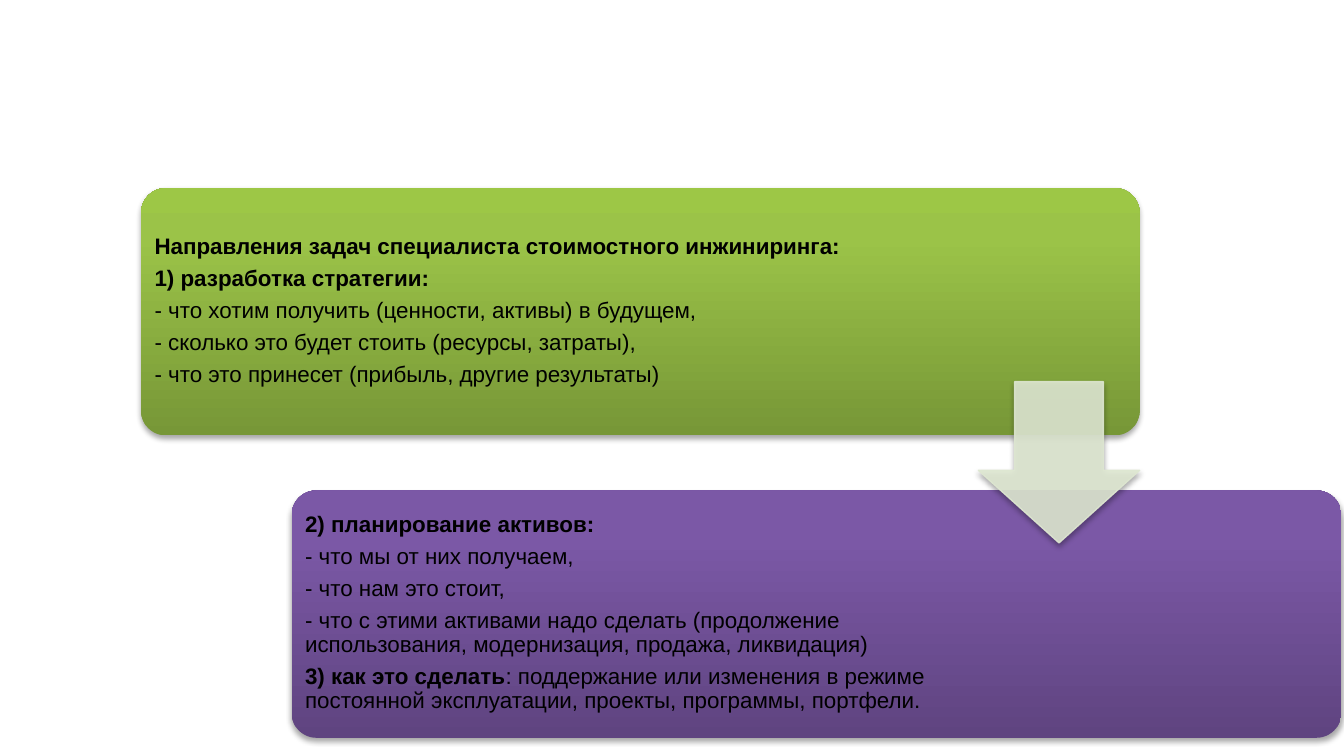
from lxml import etree
from pptx import Presentation
from pptx import util as u
from pptx.dml import color
from pptx.enum import shapes, text
from pptx.oxml import ns


def rgb(value):
    return color.RGBColor.from_string(value)


def add_child(parent, tag, **attributes):
    child = etree.SubElement(parent, ns.qn(tag))
    for name, value in attributes.items():
        child.set(name, str(value))
    return child


def add_span(para, content, bold=False, size=12, font="Arial", fill="000000"):
    span = para.add_run()
    span.text = content
    span.font.bold = bold
    span.font.size = u.Pt(size)
    span.font.name = font
    span.font.color.rgb = rgb(fill)


class StepSlide:
    """Draws the cards and arrow of a descending step process on one slide."""

    corner = 0.1
    inset = u.Inches(0.05)
    arrow_fill = "DEE7D1"
    arrow_alpha = 90000

    def __init__(self, deck):
        self.page = deck.slides.add_slide(deck.slide_layouts[6])

    def shape(self, kind, area, adjustments):
        shape = self.page.shapes.add_shape(kind, *map(u.Inches, area))
        for index, value in enumerate(adjustments):
            shape.adjustments[index] = value
        return shape

    def shadow(self, shape):
        shape.shadow.inherit = False
        effects = shape._element.spPr.find(ns.qn("a:effectLst"))
        outer = add_child(effects, "a:outerShdw", blurRad=u.Pt(3.1), dist=u.Pt(1.8),
                          dir=5400000, rotWithShape=0)
        add_child(add_child(outer, "a:srgbClr", val="000000"), "a:alpha", val=35000)

    def card(self, area, stops):
        card = self.shape(shapes.MSO_SHAPE.ROUNDED_RECTANGLE, area, [self.corner])
        card.fill.gradient()
        card.fill.gradient_angle = 90
        stop_list = next(card._element.spPr.iter(ns.qn("a:gsLst")))
        for stop in list(stop_list):
            stop_list.remove(stop)
        for position, value in stops:
            stop = add_child(stop_list, "a:gs", pos=position * 1000)
            add_child(stop, "a:srgbClr", val=value)
        card.line.fill.background()
        self.shadow(card)

    def paragraphs(self, area, paragraphs):
        box = self.page.shapes.add_textbox(*map(u.Inches, area))
        frame = box.text_frame
        frame.word_wrap = True
        frame.vertical_anchor = text.MSO_ANCHOR.MIDDLE
        frame.margin_left = frame.margin_right = self.inset
        frame.margin_top = frame.margin_bottom = self.inset
        for index, spans in enumerate(paragraphs):
            para = frame.add_paragraph() if index else frame.paragraphs[0]
            para.line_spacing = 0.9
            para.space_after = u.Pt(4.2)
            for content, bold in spans:
                add_span(para, content, bold=bold)

    def arrow(self, area):
        arrow = self.shape(shapes.MSO_SHAPE.DOWN_ARROW, area, [0.55, 0.45])
        arrow.fill.solid()
        arrow.fill.fore_color.rgb = rgb(self.arrow_fill)
        arrow.line.color.rgb = rgb(self.arrow_fill)
        arrow.line.width = u.Pt(0.75)
        for tone in arrow._element.spPr.iter(ns.qn("a:srgbClr")):
            add_child(tone, "a:alpha", val=self.arrow_alpha)
        self.shadow(arrow)


STRATEGY = [
    [("Направления задач специалиста стоимостного инжиниринга:", True)],
    [("1) разработка стратегии:", True)],
    [("- что хотим получить (ценности, активы) в будущем,", False)],
    [("- сколько это будет стоить (ресурсы, затраты),", False)],
    [("- что это принесет (прибыль, другие результаты)", False)],
]
PLANNING = [
    [("2) планирование активов:", True)],
    [("- что мы от них получаем,", False)],
    [("- что нам это стоит,", False)],
    [("- что с этими активами надо сделать (продолжение использования, "
      "модернизация, продажа, ликвидация)", False)],
    [("3) как это сделать", True),
     (": поддержание или изменения в режиме постоянной эксплуатации, "
      "проекты, программы, портфели.", False)],
]


def main():
    deck = Presentation()
    deck.slide_width = u.Inches(10)
    deck.slide_height = u.Inches(10 * 9 / 16)
    steps = StepSlide(deck)
    steps.card((1.05, 1.4, 7.43, 1.84), [(0, "779737"), (80, "9BC348"), (100, "9DC746")])
    steps.paragraphs((1.1, 1.45, 5.53, 1.73), STRATEGY)
    steps.card((2.17, 3.65, 7.81, 1.84), [(0, "5F4480"), (80, "7B58A6"), (100, "7C57A8")])
    steps.paragraphs((2.22, 3.7, 5.07, 1.73), PLANNING)
    steps.arrow((7.28, 2.84, 1.2, 1.2))
    deck.save("out.pptx")


if __name__ == "__main__":
    main()
